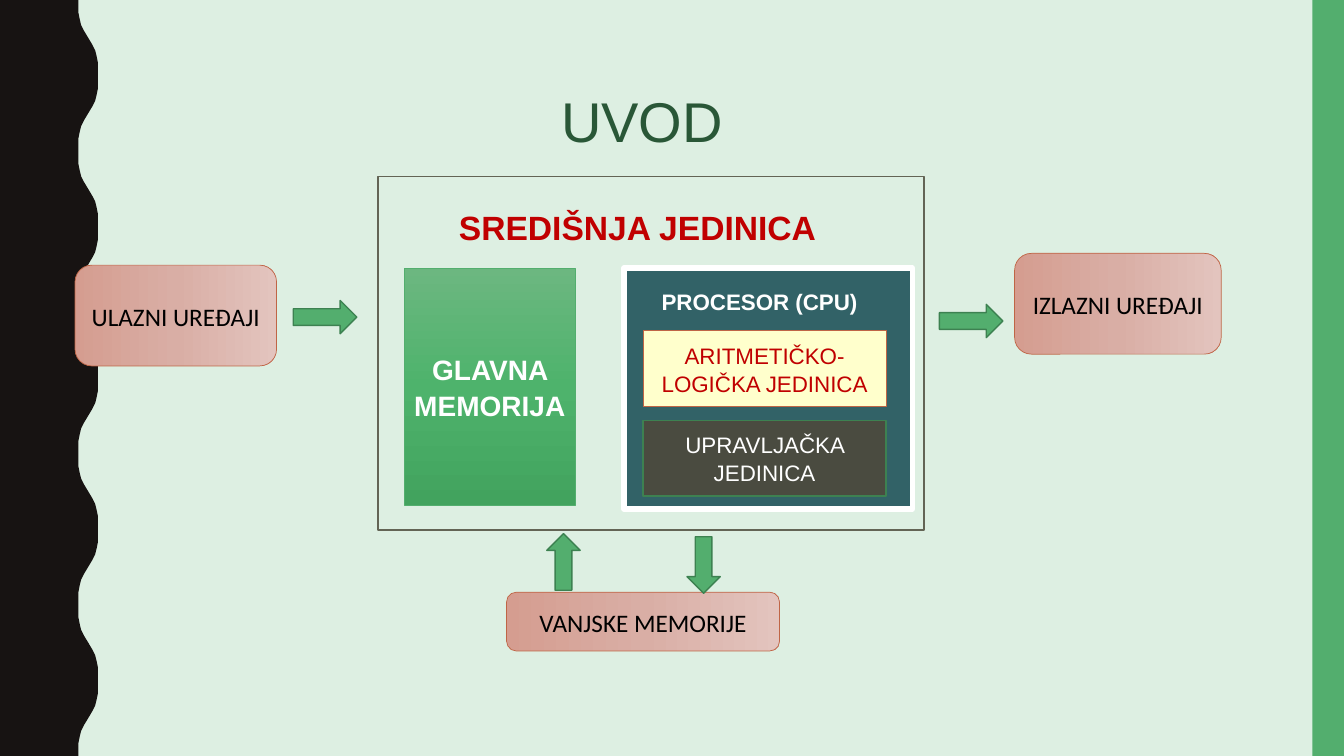
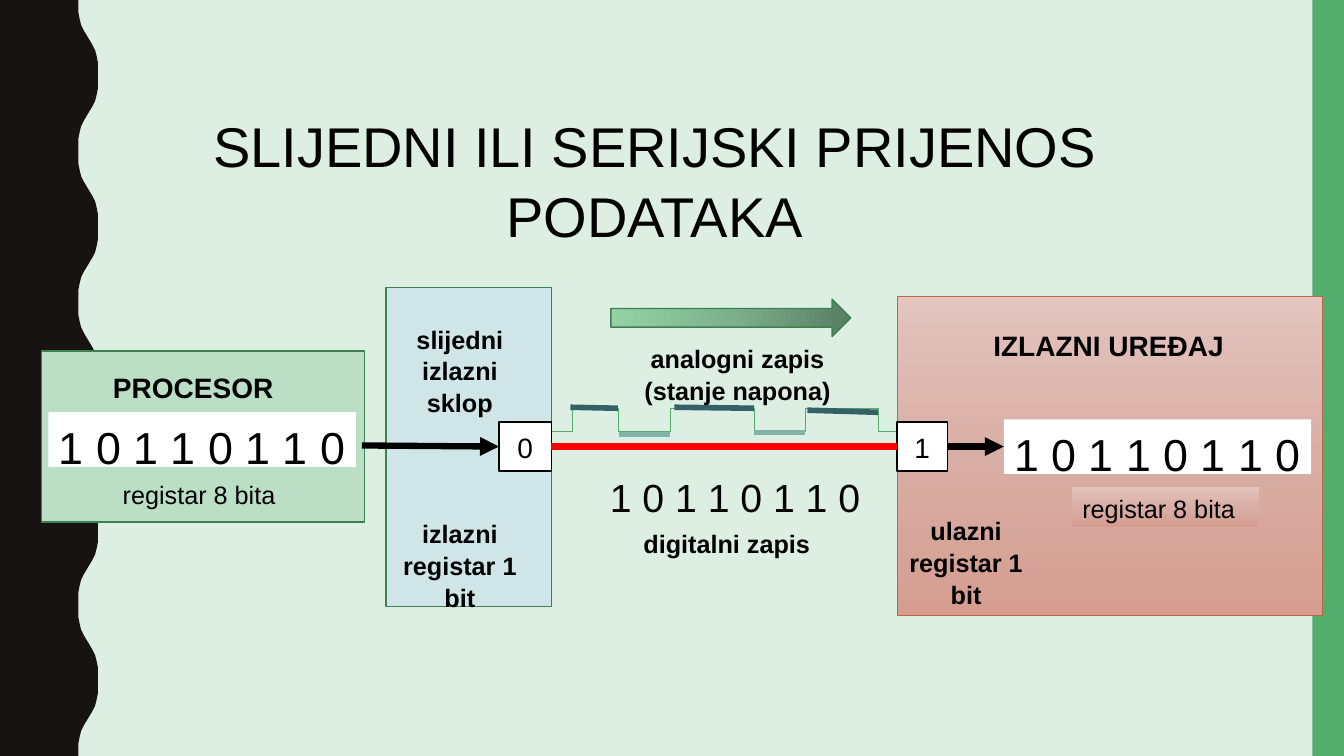
from copy import deepcopy
from dataclasses import dataclass
from math import cos, pi

from lxml.etree import SubElement
from pptx import Presentation
from pptx.dml.color import RGBColor
from pptx.enum.shapes import MSO_CONNECTOR, MSO_SHAPE
from pptx.enum.text import MSO_ANCHOR, MSO_AUTO_SIZE, PP_ALIGN
from pptx.oxml.ns import qn
from pptx.util import Pt


@dataclass(frozen=True)
class Theme:
    width: int = 960
    height: int = 540
    heading_font: str = "Arial"
    device_font: str = "Calibri"
    line_spacing: float = 1.05
    # type sizes
    title: int = 40
    register: int = 32
    digits: int = 28
    heading: int = 24
    label: int = 20
    body: int = 18
    unit: int = 16
    # colours
    mint: str = "DDEFE2"
    ink: str = "171312"
    green: str = "53AE6E"
    green_edge: str = "3D8151"
    dark_green: str = "295737"
    pale_green: str = "BADFC5"
    pale_blue: str = "CFE5E8"
    teal: str = "326267"
    light_teal: str = "81B5A8"
    olive: str = "4A4B40"
    frame_edge: str = "636455"
    yellow: str = "FFFFCC"
    rust: str = "BF6546"
    dark_red: str = "C00000"
    red: str = "FF0000"
    white: str = "FFFFFF"
    black: str = "000000"
    # gradients
    pink_fade: tuple = ("E3C4BE", "D9AEA5", "D59D90")
    green_fade: tuple = ("6CB780", "4EB36C", "42A35E")
    arrow_fade: tuple = ("94D2A6", "7DB18C", "587D63")


T = Theme()
RIGHTWARD, DOWNWARD = 0, 270
TOP, LEFT, BOTTOM, RIGHT = range(4)

# Content: computer overview
OVERVIEW_TITLE = ("UVOD", (296, 56, 325, 55.5), T.dark_green)
DEVICES = [
    ("ULAZNI UREĐAJI", (53.6, 189.4, 144, 72)),
    ("VANJSKE MEMORIJE", (361.8, 423, 195, 42)),
    ("IZLAZNI UREĐAJI", (724.7, 181, 147.6, 72)),
]
FLOW_ARROWS = [
    (MSO_SHAPE.RIGHT_ARROW, (209.5, 214.6, 45.4, 23.8)),
    (MSO_SHAPE.RIGHT_ARROW, (671, 217.4, 45.4, 23.8)),
    (MSO_SHAPE.DOWN_ARROW, (490.7, 383.4, 23.8, 40.4)),
    (MSO_SHAPE.UP_ARROW, (390.6, 381.2, 23.8, 40.4)),
]
CPU_UNITS = [
    ("ARITMETIČKO-LOGIČKA JEDINICA", T.yellow, T.dark_red, (T.rust, 0.5)),
    ("UPRAVLJAČKA JEDINICA", T.olive, T.white, (T.green_edge, 1)),
]

# Content: serial transfer
SERIAL_TITLE = ("SLIJEDNI ILI SERIJSKI PRIJENOS PODATAKA",
                (91.4, 73.4, 752.4, 104.4), T.black)
BITS = "1 0 1 1 0 1 1 0"
REGISTER_LABEL = "registar 8 bita"
SERIAL_LABELS = [  # text, box, size, bold
    ("analogni zapis\v(stanje napona)", (417, 240.5, 219.6, 51), T.body, True),
    (BITS, (398, 332.6, 254, 42), T.digits, False),
    ("digitalni zapis", (437.8, 373, 162.7, 28.8), T.body, True),
    ("PROCESOR", (56, 260, 164, 26.6), T.label, True),
    ("slijedni izlazni sklop", (277, 226.8, 103, 72.7), T.body, True),
    ("izlazni registar 1 bit", (277, 365.8, 103, 72.7), T.body, True),
    ("IZLAZNI UREĐAJ", (676, 229.7, 231.8, 58.3), T.label, True),
    ("ulazni registar 1 bit", (638.6, 363.6, 103, 72.7), T.body, True),
]
SIGNAL_START, SIGNAL_LOW, SIGNAL_HIGH = 381.6, 307.8, 291.4
SIGNAL_EDGES = [409, 441.4, 478.8, 538.6, 575.3, 627.1]
LEVEL_MARKS = [  # start x, start y, end x, end y, colour
    (407.5, 290.9, 441.4, 291.6, T.teal),
    (481.7, 290.9, 538.6, 291.6, T.teal),
    (576.7, 293, 627.1, 294.5, T.teal),
    (442, 310.3, 478.8, 310.3, T.light_teal),
    (538.6, 308.9, 575.3, 308.9, T.light_teal),
]


def rgb(value):
    return RGBColor.from_string(value)


def points(values):
    return [Pt(value) for value in values]


def paint(shape, fill=None, line=None, angle=DOWNWARD):
    """Fill with a colour or a three-colour fade; line is (colour, width)."""
    shape.shadow.inherit = False
    if fill is None:
        shape.fill.background()
    elif isinstance(fill, tuple):
        shape.fill.gradient()
        shape.fill.gradient_angle = angle
        stops = next(shape.element.spPr.iter(qn("a:gsLst")))
        stops.insert(1, deepcopy(stops[0]))
        for stop, colour, place in zip(shape.fill.gradient_stops, fill, (0, 0.5, 1)):
            stop.color.rgb = rgb(colour)
            stop.position = place
    else:
        shape.fill.solid()
        shape.fill.fore_color.rgb = rgb(fill)
    if line:
        shape.line.color.rgb = rgb(line[0])
        shape.line.width = Pt(line[1])
    else:
        shape.line.fill.background()


def write(shape, text, size, colour=T.black, bold=False, font=T.heading_font,
          align=PP_ALIGN.CENTER, anchor=MSO_ANCHOR.MIDDLE, inset=7.2):
    frame = shape.text_frame
    frame.text = text
    frame.word_wrap = True
    frame.auto_size = MSO_AUTO_SIZE.NONE
    frame.vertical_anchor = anchor
    frame.margin_left = frame.margin_right = Pt(inset)
    frame.margin_top = frame.margin_bottom = Pt(3.6)
    for paragraph in frame.paragraphs:
        paragraph.alignment = align
        paragraph.line_spacing = T.line_spacing
        for run in paragraph.runs:
            run.font.name = font
            run.font.size = Pt(size)
            run.font.bold = bold
            run.font.color.rgb = rgb(colour)


def add_block(slide, box, fill=None, line=None, kind=MSO_SHAPE.RECTANGLE,
              angle=DOWNWARD):
    block = slide.shapes.add_shape(kind, *points(box))
    paint(block, fill, line, angle)
    return block


def add_label(slide, text, box, size, colour=T.black, bold=False,
              align=PP_ALIGN.CENTER):
    label = slide.shapes.add_textbox(*points(box))
    write(label, text, size, colour, bold, align=align, anchor=MSO_ANCHOR.TOP)
    return label


def add_line(slide, ends, colour, width, arrow=False, kind=MSO_CONNECTOR.STRAIGHT):
    line = slide.shapes.add_connector(kind, *points(ends))
    line.line.color.rgb = rgb(colour)
    line.line.width = Pt(width)
    properties = line.element.spPr
    if arrow:
        SubElement(properties.find(qn("a:ln")), qn("a:tailEnd"), type="triangle")
    SubElement(properties, qn("a:effectLst"))
    return line


def add_titled_slide(prs, text, box, colour):
    slide = prs.slides.add_slide(prs.slide_layouts[5])
    title = slide.shapes.title
    title.left, title.top, title.width, title.height = points(box)
    write(title, text, T.title, colour, anchor=MSO_ANCHOR.TOP)
    return slide


def dress_master(prs, slide):
    """Background, wavy left edge and right band, shared by all slides."""
    master = prs.slide_master
    master.background.fill.solid()
    master.background.fill.fore_color.rgb = rgb(T.mint)

    period, step = 108, 4.5
    edge = []
    for index in range(int(T.height / step) + 1):
        turn = 2 * pi * index * step / period
        edge.append((63 - 7.77 * (cos(turn) - 0.1 * cos(3 * turn)), index * step))
    outline = slide.shapes.build_freeform(0, 0, scale=Pt(1))
    outline.add_line_segments(edge + [(0, T.height)], close=True)
    wave = outline.convert_to_shape()
    paint(wave, T.ink)
    band = add_block(slide, (937.5, 0, 22.5, T.height), T.green)
    for number, part in enumerate((wave, band)):
        part.element.nvSpPr.cNvPr.set("id", str(101 + number))
        master.shapes.element.insert(2 + number, part.element)


def build_overview(slide):
    # Central unit with memory and processor
    add_block(slide, (270, 126, 390, 252.7), T.mint, (T.frame_edge, 1))
    memory = add_block(slide, (288.7, 191.5, 122.4, 169.2), T.green_fade, (T.green, 0.5))
    write(memory, "GLAVNA MEMORIJA", T.label, T.white, True, inset=3)
    add_block(slide, (445.7, 191.5, 206, 172), T.teal, (T.white, 4))
    for row, (text, fill, colour, line) in enumerate(CPU_UNITS):
        unit = add_block(slide, (459.4, 236.2 + 64 * row, 173.5, 54), fill, line)
        write(unit, text, T.unit, colour)
    add_label(slide, "PROCESOR (CPU)", (455.8, 201.6, 173.5, 25.2), T.unit, T.white, True)
    add_label(slide, "SREDIŠNJA JEDINICA", (315.4, 142.6, 280, 30.2),
              T.heading, T.dark_red, True)

    # Surrounding devices and data flow
    for text, box in DEVICES:
        device = add_block(slide, box, T.pink_fade[::-1], (T.rust, 0.5),
                           MSO_SHAPE.ROUNDED_RECTANGLE, RIGHTWARD)
        write(device, text, T.body, font=T.device_font)
    for kind, box in FLOW_ARROWS:
        add_block(slide, box, T.green, (T.green_edge, 1), kind)


def add_register(slide, box):
    register = add_block(slide, box, T.white)
    write(register, BITS, T.register, anchor=MSO_ANCHOR.TOP, inset=3)
    return register


def add_bit(slide, text, box):
    bit = add_block(slide, box, T.white, (T.black, 1))
    write(bit, text, T.label)
    return bit


def build_serial(slide):
    # Voltage signal: each elbow steps at the middle of its span
    x, y, next_y = SIGNAL_START, SIGNAL_LOW, SIGNAL_HIGH
    for edge in SIGNAL_EDGES:
        next_x = 2 * edge - x
        add_line(slide, (x, y, next_x, next_y), T.green, 0.5, kind=MSO_CONNECTOR.ELBOW)
        x, y, next_y = next_x, next_y, y
    add_block(slide, (436.3, 213.8, 171.4, 26.6), T.arrow_fade, (T.green_edge, 1),
              MSO_SHAPE.RIGHT_ARROW, RIGHTWARD)

    # Processor, serial output and output device
    add_block(slide, (29.5, 250.6, 231, 122.4), T.pale_green, (T.green_edge, 1))
    add_block(slide, (275.8, 205.2, 118, 228.2), T.pale_blue, (T.green_edge, 1))
    add_block(slide, (640.8, 211.7, 304, 228.2), T.pink_fade, (T.rust, 0.5))
    add_block(slide, (766, 347.8, 133.2, 28.8), T.pink_fade)
    for left, top in ((80.6, 337.7), (766, 347.8)):
        add_label(slide, REGISTER_LABEL, (left, top, 150, 28.8), T.body,
                  align=PP_ALIGN.LEFT)
    for text, box, size, bold in SERIAL_LABELS:
        add_label(slide, text, box, size, bold=bold)
    add_register(slide, (34.6, 294.5, 219.6, 39))
    input_register = add_register(slide, (717, 299.5, 219.6, 39))
    sent_bit = add_bit(slide, "0", (356.4, 301.5, 37.4, 35))
    received_bit = add_bit(slide, "1", (640.8, 301.5, 36, 35))

    # Path of the bits
    to_output = add_line(slide, (258.5, 318.2, 356.4, 319), T.black, 4.5, arrow=True)
    to_output.end_connect(sent_bit, LEFT)
    wire = add_line(slide, (393.8, 319, 640.8, 319), T.red, 4.5)
    wire.begin_connect(sent_bit, RIGHT)
    wire.end_connect(received_bit, LEFT)
    to_register = add_line(slide, (676.8, 319, 717, 319), T.black, 4.5, arrow=True)
    to_register.begin_connect(received_bit, RIGHT)
    to_register.end_connect(input_register, LEFT)
    for *ends, colour in LEVEL_MARKS:
        add_line(slide, ends, colour, 4)


def main():
    prs = Presentation()
    prs.slide_width, prs.slide_height = Pt(T.width), Pt(T.height)
    overview = add_titled_slide(prs, *OVERVIEW_TITLE)
    dress_master(prs, overview)
    build_overview(overview)
    build_serial(add_titled_slide(prs, *SERIAL_TITLE))
    prs.save("out.pptx")


if __name__ == "__main__":
    main()
